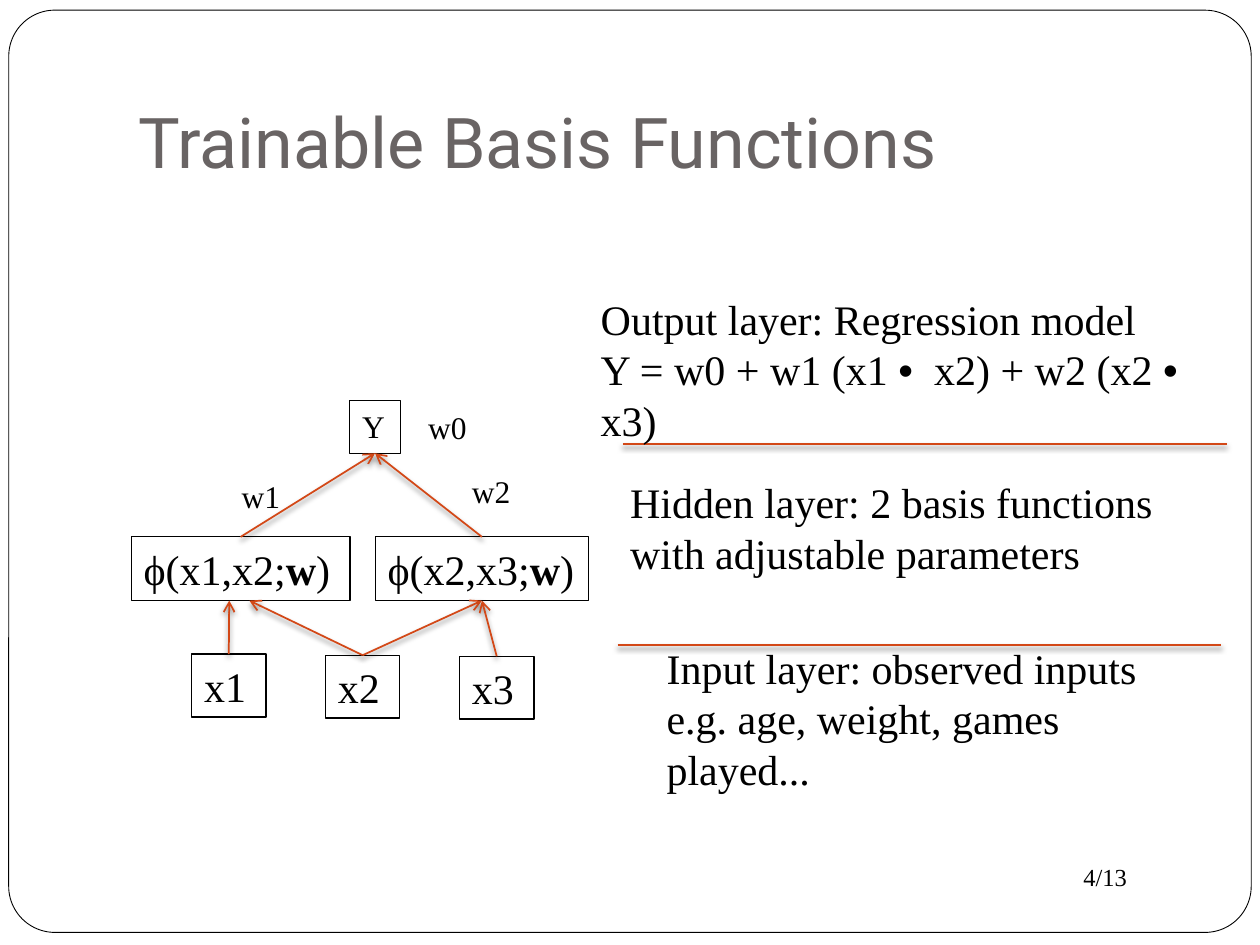
import pptx
import pptx.util
import pptx.dml.color
import pptx.enum.shapes
import pptx.enum.text
import pptx.oxml
import pptx.oxml.ns

Pt = pptx.util.Pt
SERIF = "Times New Roman"
COLORS = {"ink": "000000", "title": "696464", "accent": "D34817", "paper": "FFFFFF"}

FRAME = (5, 5.8, 710, 527)
TITLE = ("Trainable Basis Functions", (72, 21.6, 612, 90))

NODES = {
    "x1": (["x1"], (109.5, 373.8, 42.5, 36), 24),
    "x2": (["x2"], (186, 374.4, 42.5, 36), 24),
    "x3": (["x3"], (262.6, 375, 42.5, 36), 24),
    "phi12": (["ϕ(x1,x2;", "w", ")"], (75, 306.8, 125, 36.4), 24),
    "phi23": (["ϕ(x2,x3;", "w", ")"], (214.4, 306.8, 122, 36.4), 24),
    "Y": (["Y"], (199.8, 229, 29, 30), 18),
}
EDGES = [
    ("x1", "phi12", -6.5),
    ("x2", "phi12", 5),
    ("x2", "phi23", 0),
    ("x3", "phi23", 0),
    ("phi12", "Y", 0),
    ("phi23", "Y", 0),
]
DIVIDERS = [(353, 368.6), (356, 253.6)]
DIVIDER_WIDTH = 345

LABELS = [
    ([["4/13"]], (612, 489, 72, 24.2), 14),
    ([["w1"]], (131, 269, 44, 29), 18),
    ([["w2"]], (262.6, 266.4, 44, 29), 18),
    ([["w0"]], (237.6, 229.8, 44, 29), 18),
    ([["Input layer: observed inputs"], ["e.g. age, weight, games played..."]],
     (373.8, 363.6, 296.6, 94.5), 24),
    ([["Hidden layer: 2 basis functions with adjustable parameters"]],
     (353, 269, 345, 65.4), 24),
    ([["Output layer: Regression model "],
      ["Y = w0 + w1 (x1 ", "•", "  x2) + w2 (x2 ", "•", "  x3)"]],
     (336.2, 164.2, 376, 65.4), 24),
]

SHADOW = (
    '<a:effectLst %s><a:outerShdw blurRad="38100" dist="25400" dir="5400000" rotWithShape="0">'
    '<a:srgbClr val="%s"><a:alpha val="50000"/></a:srgbClr></a:outerShdw></a:effectLst>'
    % (pptx.oxml.ns.nsdecls("a"), COLORS["ink"])
)
ARROWHEAD = '<a:tailEnd %s type="arrow"/>' % pptx.oxml.ns.nsdecls("a")


def rgb(name):
    return pptx.dml.color.RGBColor.from_string(COLORS[name])


def points(box):
    return [Pt(length) for length in box]


def write(frame, paragraphs, size, font=SERIF, color="ink"):
    frame.word_wrap = True
    frame.vertical_anchor = pptx.enum.text.MSO_ANCHOR.TOP
    for index, pieces in enumerate(paragraphs):
        paragraph = frame.paragraphs[0] if index == 0 else frame.add_paragraph()
        paragraph.alignment = pptx.enum.text.PP_ALIGN.LEFT
        for piece in pieces:
            run = paragraph.add_run()
            run.text = piece
            run.font.size = Pt(size)
            run.font.name = "Arial" if piece == "•" else font
            run.font.bold = piece == "w"
            run.font.color.rgb = rgb(color)


def add_text(slide, paragraphs, box, size, font=SERIF, color="ink"):
    frame = slide.shapes.add_textbox(*points(box)).text_frame
    write(frame, paragraphs, size, font, color)
    return frame


def add_outline(slide, preset, box, width):
    outline = slide.shapes.add_shape(preset, *points(box))
    outline.shadow.inherit = False
    outline.fill.background()
    outline.line.color.rgb = rgb("ink")
    outline.line.width = Pt(width)
    return outline


def add_line(slide, start, end, arrow=False):
    line = slide.shapes.add_connector(
        pptx.enum.shapes.MSO_CONNECTOR.STRAIGHT, *points(start + end))
    line.line.color.rgb = rgb("accent")
    line.line.width = Pt(1)
    if arrow:
        line.line._get_or_add_ln().append(pptx.oxml.parse_xml(ARROWHEAD))
    line._element.spPr.append(pptx.oxml.parse_xml(SHADOW))


def main():
    presentation = pptx.Presentation()
    presentation.slide_width, presentation.slide_height = Pt(720), Pt(540)
    slide = presentation.slides.add_slide(presentation.slide_layouts[6])
    presets = pptx.enum.shapes.MSO_SHAPE

    border = add_outline(slide, presets.ROUNDED_RECTANGLE, FRAME, 0.5)
    border.adjustments[0] = 0.05
    border.fill.solid()
    border.fill.fore_color.rgb = rgb("paper")

    title, title_box = TITLE
    heading = add_text(slide, [[title]], title_box, 40, "Roboto", "title")
    heading.vertical_anchor = pptx.enum.text.MSO_ANCHOR.BOTTOM
    heading.margin_bottom = Pt(7.2)

    for pieces, box, size in NODES.values():
        node = add_outline(slide, presets.RECTANGLE, box, 0.75)
        write(node.text_frame, [pieces], size)

    for source, target, shift in EDGES:
        left, top, width, _ = NODES[source][1]
        target_left, target_top, target_width, target_height = NODES[target][1]
        tip = (target_left + target_width / 2 + shift, target_top + target_height)
        add_line(slide, (left + width / 2, top), tip, arrow=True)

    for left, top in DIVIDERS:
        add_line(slide, (left, top), (left + DIVIDER_WIDTH, top))

    for paragraphs, box, size in LABELS:
        add_text(slide, paragraphs, box, size)

    presentation.save("out.pptx")


if __name__ == "__main__":
    main()
